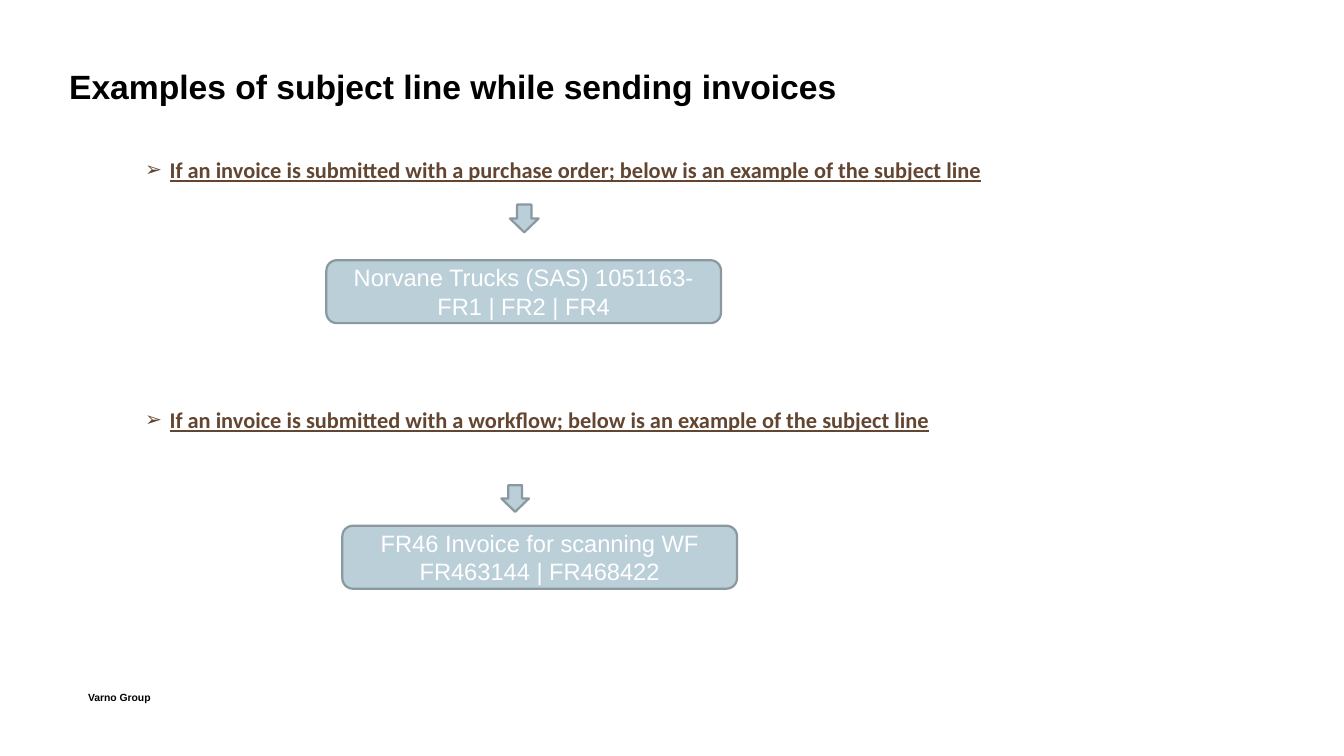
from lxml.etree import SubElement
from pptx import Presentation
from pptx.dml.color import RGBColor
from pptx.enum.shapes import MSO_SHAPE
from pptx.enum.text import MSO_ANCHOR, PP_ALIGN
from pptx.oxml.ns import qn
from pptx.util import Pt

COLOURS = {
    "black": "000000",
    "white": "FFFFFF",
    "brown": "634632",
    "pale_blue": "BACFD8",
    "slate": "8A99A0",
}

EXAMPLES = [
    {
        "heading": "If an invoice is submitted with a purchase order; below is an example of the subject line",
        "heading_top": 105.5,
        "arrow": (344.2, 138.2, 19.4, 18.7),
        "subject": "Norvane Trucks (SAS) 1051163-FR1 | FR2 | FR4",
        "box": (220.3, 175.7, 266.4, 42.5),
    },
    {
        "heading": "If an invoice is submitted with a workflow; below is an example of the subject line",
        "heading_top": 274.2,
        "arrow": (338.4, 327.6, 18.7, 18),
        "subject": "FR46 Invoice for scanning WF FR463144 | FR468422",
        "box": (231.1, 355, 266.4, 42.5),
    },
]


def colour(name):
    return RGBColor.from_string(COLOURS[name])


def add_bullet(paragraph, character, indent):
    properties = paragraph._p.get_or_add_pPr()
    properties.set("marL", str(Pt(indent)))
    properties.set("indent", str(-Pt(indent)))
    bullet_colour = SubElement(properties, qn("a:buClr"))
    SubElement(bullet_colour, qn("a:srgbClr"), val=COLOURS["brown"])
    SubElement(properties, qn("a:buSzPct"), val="90000")
    SubElement(properties, qn("a:buFont"), typeface="Arial")
    SubElement(properties, qn("a:buChar"), char=character)


def write_text(shape, text, *, size, color, font="Arial", bold=False, underline=False,
               align=PP_ALIGN.LEFT, margin=7.2, bullet=None):
    frame = shape.text_frame
    frame.word_wrap = True
    frame.vertical_anchor = MSO_ANCHOR.MIDDLE
    frame.margin_left = frame.margin_right = Pt(margin)
    frame.margin_top = frame.margin_bottom = Pt(0)
    paragraph = frame.paragraphs[0]
    paragraph.alignment = align
    if bullet:
        add_bullet(paragraph, bullet, 16.5)
    run = paragraph.add_run()
    run.text = text
    run.font.name = font
    run.font.size = Pt(size)
    run.font.bold = bold
    run.font.underline = underline
    run.font.color.rgb = colour(color)


def add_label(slide, bounds, text, **text_format):
    shape = slide.shapes.add_textbox(*map(Pt, bounds))
    write_text(shape, text, **text_format)


def add_block(slide, kind, bounds):
    shape = slide.shapes.add_shape(kind, *map(Pt, bounds))
    shape.shadow.inherit = False
    shape.fill.solid()
    shape.fill.fore_color.rgb = colour("pale_blue")
    shape.line.color.rgb = colour("slate")
    shape.line.width = Pt(1.5)
    return shape


def add_example(slide, example):
    add_label(slide, (98, example["heading_top"], 720, 18.5), example["heading"], size=15.1,
              color="brown", font="Calibri", bold=True, underline=True, margin=0, bullet="➢")
    add_block(slide, MSO_SHAPE.DOWN_ARROW, example["arrow"])
    subject_box = add_block(slide, MSO_SHAPE.ROUNDED_RECTANGLE, example["box"])
    write_text(subject_box, example["subject"], size=16, color="white", align=PP_ALIGN.CENTER)


def main():
    presentation = Presentation()
    presentation.slide_width = Pt(907.2)
    presentation.slide_height = Pt(510.48)
    slide = presentation.slides.add_slide(presentation.slide_layouts[6])
    add_label(slide, (39.6, 42, 816.5, 32), "Examples of subject line while sending invoices",
              size=22.7, color="black", bold=True)
    for example in EXAMPLES:
        add_example(slide, example)
    add_label(slide, (59.5, 462.5, 186.5, 16.5), "Varno Group",
              size=7, color="black", bold=True, margin=0)
    presentation.save("out.pptx")


if __name__ == "__main__":
    main()
